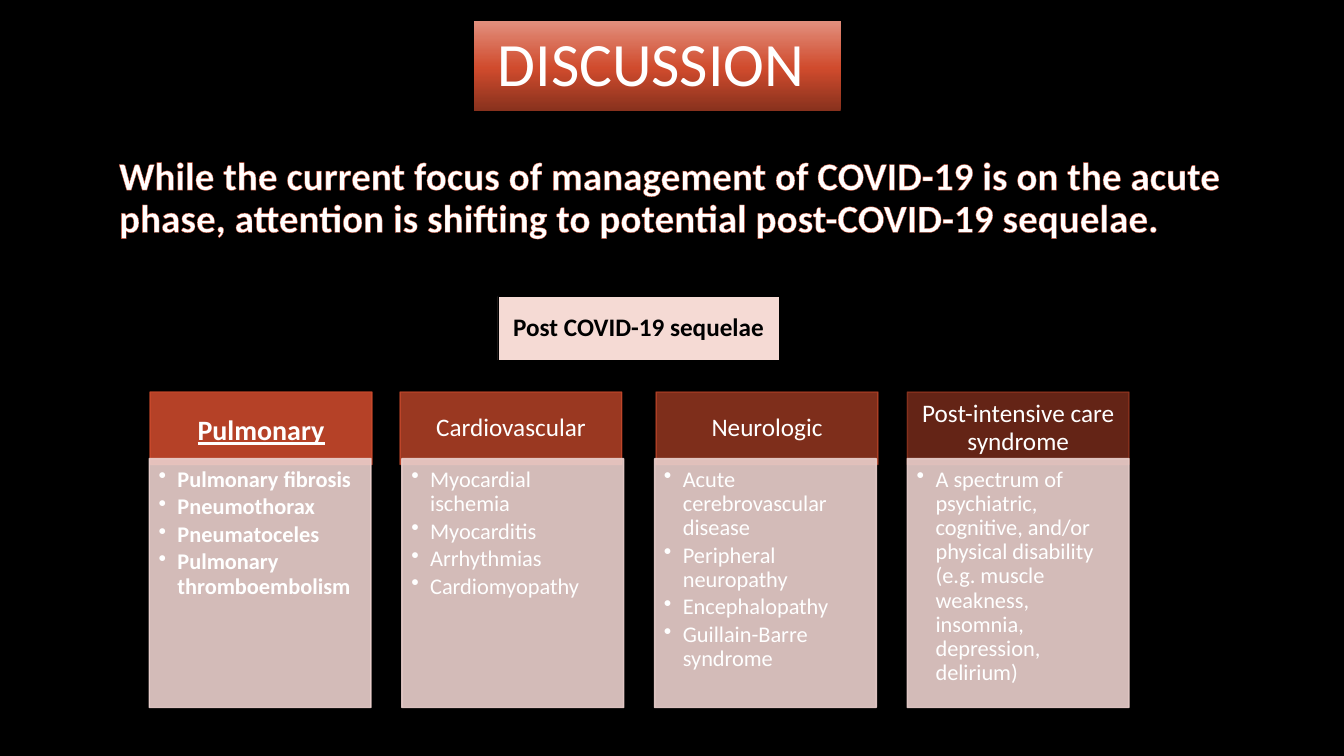
from copy import deepcopy

from lxml.etree import SubElement
from pptx import Presentation
from pptx.dml.color import RGBColor
from pptx.enum.shapes import MSO_SHAPE as Shape
from pptx.enum.text import MSO_ANCHOR as Anchor, MSO_AUTO_SIZE as AutoSize, PP_ALIGN as Align
from pptx.oxml.ns import qn
from pptx.util import Pt

BLACK = RGBColor(0x00, 0x00, 0x00)
WHITE = RGBColor(0xFF, 0xFF, 0xFF)
RUST = RGBColor(0xC9, 0x49, 0x2C)
PINK = RGBColor(0xEB, 0xD0, 0xCD)
BLUSH = RGBColor(0xF5, 0xDA, 0xD4)
TITLE_STOPS = [(0, RGBColor(0x87, 0x31, 0x1D)),
               (0.48, RGBColor(0xD0, 0x4B, 0x2D)),
               (1, RGBColor(0xE2, 0x8F, 0x7D))]

LEFT, PITCH, WIDTH = 106.6, 180.5, 158.4
HEADER_TOP, HEADER_HEIGHT = 280, 51.8
PANEL_TOP, PANEL_HEIGHT = 327.6, 177.8

# heading, its left offset from the panel, its opacity in percent, items
COLUMNS = [
    ("Pulmonary", 0.7, 90,
     ["Pulmonary fibrosis", "Pneumothorax", "Pneumatoceles",
      "Pulmonary thromboembolism"]),
    ("Cardiovascular", -1.3, 77,
     ["Myocardial ischemia", "Myocarditis", "Arrhythmias", "Cardiomyopathy"]),
    ("Neurologic", 1.1, 63,
     ["Acute cerebrovascular disease", "Peripheral neuropathy",
      "Encephalopathy", "Guillain-Barre syndrome"]),
    ("Post-intensive care syndrome", 0, 50,
     ["A spectrum of psychiatric, cognitive, and/or physical disability "
      "(e.g. muscle weakness, insomnia, depression, delirium)"]),
]


class Deck:
    font = "Calibri"

    def __init__(self):
        self.prs = Presentation()
        self.prs.slide_width, self.prs.slide_height = Pt(960), Pt(540)
        self.s = self.prs.slides.add_slide(self.prs.slide_layouts[1])
        fill = self.s.background.fill
        fill.solid()
        fill.fore_color.rgb = BLACK

    def place(self, sp, x, y, w, h):
        sp.left, sp.top, sp.width, sp.height = Pt(x), Pt(y), Pt(w), Pt(h)

    def set_text(self, sp, lines, size, color=WHITE, bold=False, align=Align.LEFT,
                 anchor=Anchor.TOP, insets=(7.2, 3.6, 7.2, 3.6), after=0):
        tf = sp.text_frame
        tf.text = "\n".join(lines)
        tf.word_wrap, tf.auto_size, tf.vertical_anchor = True, AutoSize.NONE, anchor
        (tf.margin_left, tf.margin_top,
         tf.margin_right, tf.margin_bottom) = map(Pt, insets)
        for p in tf.paragraphs:
            p.alignment, p.line_spacing, p.space_after = align, 0.9, Pt(after)
            font = p.runs[0].font
            font.name, font.size, font.bold = self.font, Pt(size), bold
            font.color.rgb = color
        return tf.paragraphs

    def title(self, text, x, y, w, h):
        sp = self.s.shapes.title
        self.place(sp, x, y, w, h)
        self.set_text(sp, [text], 44, anchor=Anchor.MIDDLE)
        sp.fill.gradient()
        sp.fill.gradient_angle = 90
        stop_list = next(sp._element.iter(qn("a:gsLst")))
        stop_list.append(deepcopy(stop_list[0]))
        for stop, (position, color) in zip(sp.fill.gradient_stops, TITLE_STOPS):
            stop.position, stop.color.rgb = position, color

    def statement(self, text, x, y, w, h):
        """Fill the body placeholder with one unbulleted, outlined paragraph."""
        sp = self.s.placeholders[1]
        self.place(sp, x, y, w, h)
        p = self.set_text(sp, [text], 28, bold=True)[0]
        p.space_before = Pt(10)
        self.indent(p, 0, 0)
        SubElement(p._p.pPr, qn("a:buNone"))
        rPr = p.runs[0]._r.rPr
        ln = rPr.makeelement(qn("a:ln"), {"w": str(Pt(0.8))})
        rPr.insert(0, ln)
        SubElement(SubElement(ln, qn("a:solidFill")), qn("a:srgbClr"), val=str(RUST))

    def box(self, x, y, w, h, fill, line, line_width=1, opacity=100):
        sp = self.s.shapes.add_shape(Shape.RECTANGLE, Pt(x), Pt(y), Pt(w), Pt(h))
        sp.shadow.inherit = False
        sp.fill.solid()
        sp.fill.fore_color.rgb = fill
        sp.line.color.rgb, sp.line.width = line, Pt(line_width)
        if opacity < 100:
            for color in sp._element.spPr.iter(qn("a:srgbClr")):
                SubElement(color, qn("a:alpha"), val=str(opacity * 1000))
        return sp

    def indent(self, p, left, first):
        pPr = p._p.get_or_add_pPr()
        pPr.set("marL", str(Pt(left)))
        pPr.set("indent", str(Pt(first)))

    def header(self, text, x, opacity, lead):
        sp = self.box(x, HEADER_TOP, WIDTH, HEADER_HEIGHT, RUST, RUST, opacity=opacity)
        size, top = (20, 11) if lead else (18, 6)
        p = self.set_text(sp, [text], size, bold=lead, align=Align.CENTER,
                          anchor=Anchor.MIDDLE, insets=(10, top, 10, 6))[0]
        p.runs[0].font.underline = lead

    def panel(self, items, x, bold):
        sp = self.box(x, PANEL_TOP, WIDTH, PANEL_HEIGHT, PINK, PINK, opacity=90)
        for p in self.set_text(sp, items, 16, bold=bold,
                               insets=(6.7, 6.7, 9, 10), after=2.4):
            self.indent(p, 13.5, -13.5)
            SubElement(p._p.pPr, qn("a:buChar"), char="•")


def main():
    deck = Deck()
    deck.title(" DISCUSSION", 338.4, 15.1, 262, 64.5)
    deck.statement("While the current focus of management of COVID-19 is on the "
                   "acute phase, attention is shifting to potential "
                   "post-COVID-19 sequelae.", 77.8, 108, 828, 342.7)
    for i, (heading, offset, opacity, items) in enumerate(COLUMNS):
        x = LEFT + i * PITCH
        deck.header(heading, x + offset, opacity, lead=i == 0)
        deck.panel(items, x, bold=i == 0)
    key = deck.box(355.7, 211.7, 200.9, 45.4, BLUSH, BLACK, 0.5)
    deck.set_text(key, ["Post COVID-19 sequelae"], 18, BLACK, True,
                  Align.CENTER, Anchor.MIDDLE)
    deck.prs.save("out.pptx")


if __name__ == "__main__":
    main()
